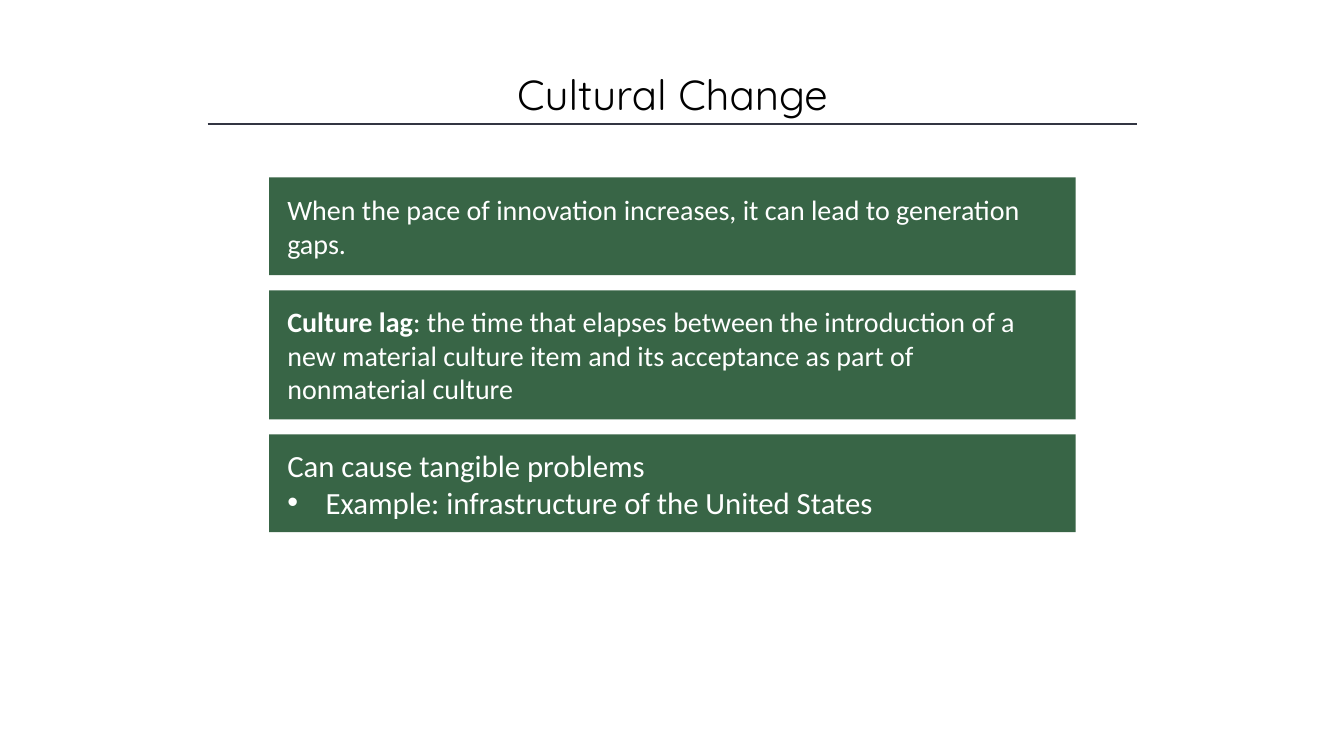
import pptx
import pptx.util
import pptx.dml.color
import pptx.enum.shapes
import pptx.enum.text
import pptx.oxml.ns
from lxml import etree

Inches = pptx.util.Inches
Pt = pptx.util.Pt
RGBColor = pptx.dml.color.RGBColor
qn = pptx.oxml.ns.qn

GREEN = RGBColor(0x38, 0x65, 0x46)
NAVY = RGBColor(0x32, 0x35, 0x42)
BLACK = RGBColor(0, 0, 0)
WHITE = RGBColor(0xFF, 0xFF, 0xFF)

CARD_GAP = 0.15
BULLET_INDENT = 0.38
CARDS = [
    (0.97, 20, [("", "When the pace of innovation increases, it can lead to generation gaps.", False)]),
    (1.28, 20, [("Culture lag", ": the time that elapses between the introduction of a new material "
                 "culture item and its acceptance as part of nonmaterial culture", False)]),
    (0.97, 22, [("", "Can cause tangible problems", False),
                ("", "Example: infrastructure of the United States", True)]),
]


def add_heading(slide, left, top, width, height):
    heading = slide.shapes.title
    heading.left, heading.top = Inches(left), Inches(top)
    heading.width, heading.height = Inches(width), Inches(height)
    frame = heading.text_frame
    frame.text = "Cultural Change"
    frame.auto_size = pptx.enum.text.MSO_AUTO_SIZE.NONE
    frame.vertical_anchor = pptx.enum.text.MSO_ANCHOR.TOP
    paragraph = frame.paragraphs[0]
    paragraph.alignment = pptx.enum.text.PP_ALIGN.CENTER
    font = paragraph.runs[0].font
    font.name, font.size = "Quicksand", Pt(30)
    font.color.rgb = BLACK

    inset, rule_y = 0.39, top + 0.6
    rule = slide.shapes.add_connector(
        pptx.enum.shapes.MSO_CONNECTOR.STRAIGHT,
        Inches(left + inset), Inches(rule_y),
        Inches(left + width - inset), Inches(rule_y))
    rule.line.color.rgb = NAVY
    rule.line.width = Pt(1)
    etree.SubElement(rule._element.spPr, qn("a:effectLst"))


def add_bullet(paragraph):
    properties = paragraph._p.get_or_add_pPr()
    properties.set("marL", str(Inches(BULLET_INDENT)))
    properties.set("indent", str(-Inches(BULLET_INDENT)))
    etree.SubElement(properties, qn("a:buFont")).set("typeface", "Arial")
    etree.SubElement(properties, qn("a:buChar")).set("char", "•")


def add_card(slide, left, top, width, height, size, statements):
    card = slide.shapes.add_shape(
        pptx.enum.shapes.MSO_SHAPE.RECTANGLE,
        Inches(left), Inches(top), Inches(width), Inches(height))
    card.shadow.inherit = False
    card.fill.solid()
    card.fill.fore_color.rgb = GREEN
    card.line.fill.background()
    frame = card.text_frame
    frame.word_wrap = True
    frame.vertical_anchor = pptx.enum.text.MSO_ANCHOR.MIDDLE
    frame.margin_left, frame.margin_right = Inches(0.18), Inches(0.22)
    for index, (term, wording, bulleted) in enumerate(statements):
        paragraph = frame.add_paragraph() if index else frame.paragraphs[0]
        paragraph.alignment = pptx.enum.text.PP_ALIGN.LEFT
        if bulleted:
            add_bullet(paragraph)
        for text, bold in ((term, True), (wording, False)):
            if text:
                run = paragraph.add_run()
                run.text = text
                run.font.name, run.font.size = "Calibri", Pt(size)
                run.font.bold = bold
                run.font.color.rgb = WHITE


def add_cards(slide, left, top, width):
    for height, size, statements in CARDS:
        add_card(slide, left, top, width, height, size, statements)
        top += height + CARD_GAP


def main():
    deck = pptx.Presentation()
    deck.slide_width, deck.slide_height = Inches(13.33), Inches(7.5)
    slide = deck.slides.add_slide(deck.slide_layouts.get_by_name("Title Only"))
    add_heading(slide, 1.67, 0.63, 10, 0.61)
    add_cards(slide, 2.67, 1.76, 8)
    deck.save("out.pptx")


if __name__ == "__main__":
    main()
